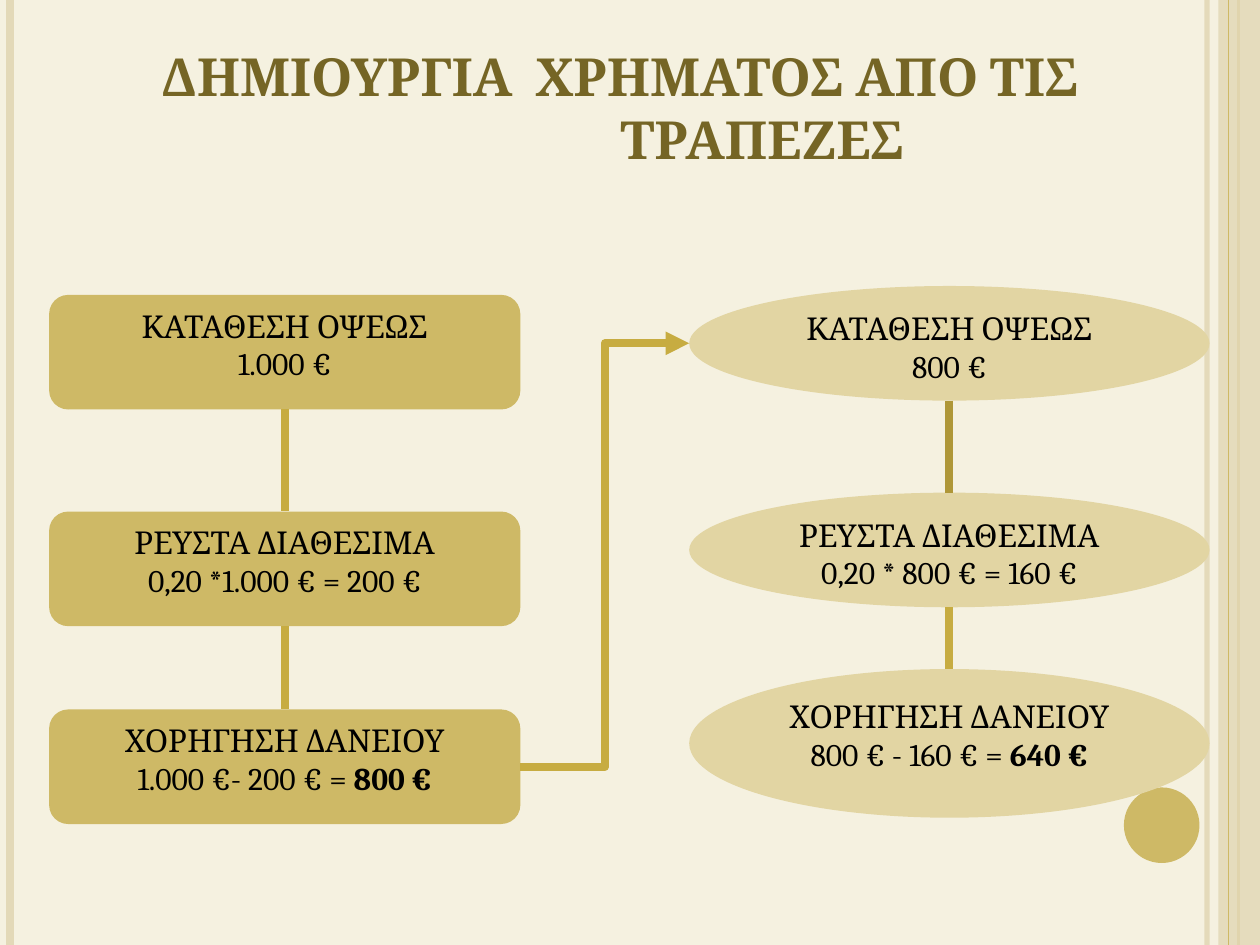
"""Build a slide on how banks create money, with two linked chains of steps."""
from pptx import Presentation
from pptx.dml.color import RGBColor as RGB
from pptx.enum.shapes import MSO_CONNECTOR as LINK, MSO_SHAPE as FORM
from pptx.enum.text import MSO_ANCHOR as ANCHOR, PP_ALIGN as ALIGN
from pptx.oxml.ns import qn
from pptx.util import Inches, Pt
from lxml.etree import SubElement as Sub

INK = {"paper": "F5F1E0", "sand": "E3D9B8", "gold": "CEB966", "pale": "E2D5A3",
       "line": "C7AC41", "dark": "AF9738", "title": "756525", "text": "000000"}
HUE = {name: RGB.from_string(code) for name, code in INK.items()}
FRAME = {"word_wrap": True, "vertical_anchor": ANCHOR.TOP}

deck = Presentation()
deck.slide_width, deck.slide_height = Inches(10), Inches(7.5)
col, row = deck.slide_width / 100, deck.slide_height / 100
slide = deck.slides.add_slide(deck.slide_layouts[6])
slide.background.fill.solid()
slide.background.fill.fore_color.rgb = HUE["paper"]
parts = slide.shapes


def write(shape, lines, size, hue, bold):
    frame = shape.text_frame
    for key, val in FRAME.items():
        setattr(frame, key, val)
    for i, runs in enumerate(lines):
        para = frame.add_paragraph() if i else frame.paragraphs[0]
        para.alignment = ALIGN.CENTER
        for j, text in enumerate(runs):
            run = para.add_run()
            run.text = text
            look = {"name": "Cambria", "size": Pt(size), "bold": bold or j > 0}
            for key, val in look.items():
                setattr(run.font, key, val)
            run.font.color.rgb = HUE[hue]


def link(kind, x1, y1, x2, y2, hue, width):
    line = parts.add_connector(kind, *(round(v) for v in
                               (x1 * col, y1 * row, x2 * col, y2 * row)))
    line.line.color.rgb = HUE[hue]
    line.line.width = Pt(width)
    Sub(line.element.spPr, qn("a:effectLst"))
    return line


rails = [link(LINK.STRAIGHT, x, 0, x, 100, hue, width) for x, hue, width in (
    (95.8, "sand", 3), (0.8, "sand", 4.5), (98.3, "gold", 1.5))]
shapes = [(FORM.RECTANGLE, 96.7, 0, 3.3, 100, "sand", None),
          (FORM.OVAL, 89.2, 83.33, 6, 8, "gold", None)]
left = [(31.2, ["ΚΑΤΑΘΕΣΗ ΟΨΕΩΣ"], ["1.000 €"]),
        (54.13, ["ΡΕΥΣΤΑ ΔΙΑΘΕΣΙΜΑ"], ["0,20 *1.000 € = 200 €"]),
        (75.07, ["ΧΟΡΗΓΗΣΗ ΔΑΝΕΙΟΥ"], ["1.000 €- 200 € = ", "800 €"])]
right = [(30.27, 12.13, ["800 €"]),
         (52.13, 12.13, ["0,20 * 800 € = 160 €"]),
         (70.8, 15.73, ["800 € - 160 € = ", "640 €"])]
shapes += [(FORM.ROUNDED_RECTANGLE, 3.9, y, 37.4, 12.13, "gold", lines)
           for y, *lines in left]
shapes += [(FORM.OVAL, 54.7, y, 41.3, tall, "pale", [step[1], sums])
           for step, (y, tall, sums) in zip(left, right)]

made = []
for form, x, y, wide, tall, hue, lines in shapes:
    shape = parts.add_shape(form, *(round(v) for v in
                            (x * col, y * row, wide * col, tall * row)))
    shape.shadow.inherit = False
    shape.fill.solid()
    shape.fill.fore_color.rgb = HUE[hue]
    shape.line.fill.background()
    if lines:
        write(shape, lines, 18, "text", False)
    made.append(shape)
band, disc, *boxes = made
link(LINK.STRAIGHT, 97.5, 0, 97.5, 100, "gold", 0.75)

for shape, share in ((rails[0], 93), (band, 87)):
    tint = shape.element.spPr.xpath(".//a:srgbClr")[0]
    Sub(tint, qn("a:alpha")).set("val", str(share * 1000))

title = parts.add_textbox(*(round(v) for v in
                          (2.3 * col, 4 * row, 93.8 * col, 16.67 * row)))
write(title, [["ΔΗΜΙΟΥΡΓΙΑ  ΧΡΗΜΑΤΟΣ ΑΠΟ ΤΙΣ"], ["ΤΡΑΠΕΖΕΣ"]], 30, "title", True)
inset = title.text_frame.paragraphs[1]._p.get_or_add_pPr()
inset.set("marL", str(round(22.6 * col)))
inset.set("indent", "0")

for upper, lower in zip(boxes[:2], boxes[1:3]):
    line = link(LINK.STRAIGHT, 0, 0, 0, 0, "line", 4.5)
    line.begin_connect(upper, 2)
    line.end_connect(lower, 0)
for upper, lower, hue in zip(right, right[1:], ("dark", "line")):
    link(LINK.STRAIGHT, 75.35, upper[0] + upper[1], 75.35, lower[0], hue, 4.5)

loan = link(LINK.ELBOW, 41.3, 81.13, 54.7, 36.33, "line", 4.5)
loan.begin_connect(boxes[2], 3)
Sub(loan.line._get_or_add_ln(), qn("a:tailEnd")).set("type", "triangle")

deck.save("out.pptx")
